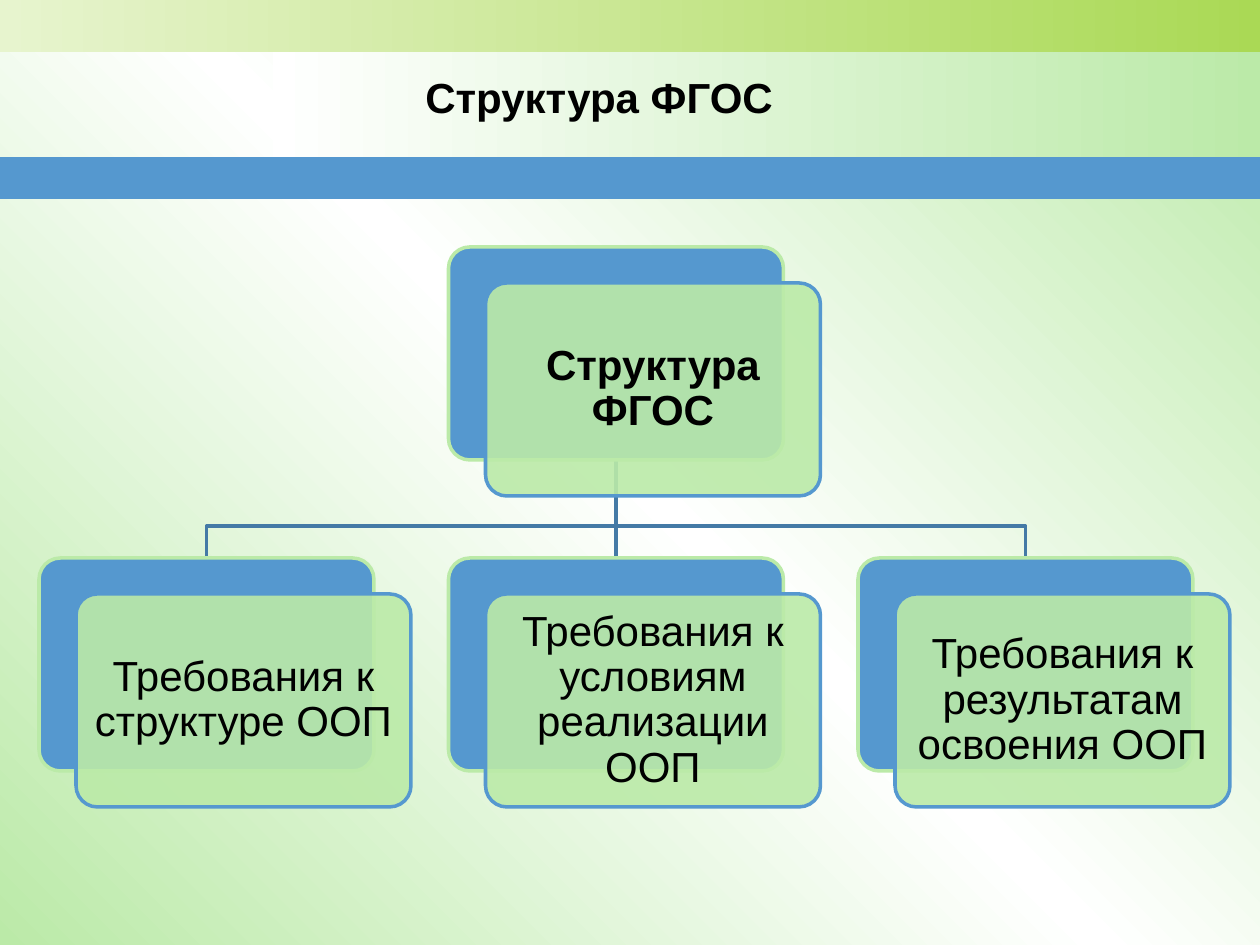
from copy import deepcopy

from lxml import etree
from pptx import Presentation
from pptx.dml.color import RGBColor
from pptx.enum.shapes import MSO_CONNECTOR, MSO_SHAPE
from pptx.enum.text import MSO_ANCHOR, PP_ALIGN
from pptx.oxml.ns import qn
from pptx.util import Pt

RECT, ROUNDED = MSO_SHAPE.RECTANGLE, MSO_SHAPE.ROUNDED_RECTANGLE
STRAIGHT = MSO_CONNECTOR.STRAIGHT
CENTER, MIDDLE = PP_ALIGN.CENTER, MSO_ANCHOR.MIDDLE

PX = 914400 / 126
WIDTH, HEIGHT = 1260, 945
GREEN, BLUE, WIRE = "BBEAA8", "5598CF", "447AA6"
WHITE, BLACK = "FFFFFF", "000000"
CARD_W, CARD_H = 335, 213
CARD_SHIFT = 37  # offset of the front card from the back card


def px(value):
    return round(value * PX)


def color(hex_code):
    return RGBColor.from_string(hex_code)


def set_gradient(fill, owner, angle, colors):
    """Spread the colors evenly along a linear gradient."""
    fill.gradient()
    fill.gradient_angle = angle
    stop_list = next(owner.iter(qn("a:gsLst")))
    for _ in colors[2:]:
        stop_list.append(deepcopy(stop_list[0]))
    for i, (stop, hex_code) in enumerate(zip(fill.gradient_stops, colors)):
        stop.color.rgb = color(hex_code)
        stop.position = i / (len(colors) - 1)


def add_box(slide, kind, x, y, w, h, fill=None, line=None):
    box = slide.shapes.add_shape(kind, px(x), px(y), px(w), px(h))
    box.shadow.inherit = False
    if fill:
        box.fill.solid()
        box.fill.fore_color.rgb = color(fill)
    if line:
        box.line.color.rgb = color(line)
        box.line.width = Pt(2)
    else:
        box.line.fill.background()
    return box


def write(frame, text, bold):
    frame.word_wrap = True
    frame.vertical_anchor = MIDDLE
    paragraph = frame.paragraphs[0]
    paragraph.text = text
    paragraph.alignment = CENTER
    paragraph.font.name = "Arial"
    paragraph.font.size = Pt(24)
    paragraph.font.bold = bold
    paragraph.font.color.rgb = color(BLACK)
    return paragraph


def add_backdrop(slide):
    set_gradient(slide.background.fill, slide._element, 45, [GREEN, WHITE, GREEN])
    bands = [
        (0, 0, WIDTH, 52, ["E7F4CE", "AAD955"]),
        (273, 52, WIDTH - 273, 105, [WHITE, GREEN]),
    ]
    for x, y, w, h, colors in bands:
        band = add_box(slide, RECT, x, y, w, h)
        set_gradient(band.fill, band._element, 0, colors)
    add_box(slide, RECT, 0, 157, WIDTH, 42, BLUE)


def add_title(slide, x, y, w, h):
    title = slide.shapes.add_textbox(px(x), px(y), px(w), px(h))
    write(title.text_frame, "Структура ФГОС ", True)


def add_card(slide, x, y, text, bold=False):
    """Draw a blue card with a translucent, labelled card in front."""
    back = add_box(slide, ROUNDED, x, y, CARD_W, CARD_H, BLUE, GREEN)
    front = add_box(slide, ROUNDED, x + CARD_SHIFT, y + CARD_SHIFT - 1,
                    CARD_W, CARD_H, GREEN, BLUE)
    for card in (back, front):
        card.adjustments[0] = 0.1
    fill_color = next(front._element.spPr.iter(qn("a:srgbClr")))
    etree.SubElement(fill_color, qn("a:alpha"), val="90000")

    frame = front.text_frame
    frame.margin_left = frame.margin_right = px(7)
    frame.margin_top = frame.margin_bottom = px(7)
    write(frame, text, bold).line_spacing = 0.9


def add_branch(slide, x1, y1, x2, y2):
    """Run a line down from the parent, across, and down to the child."""
    if x1 == x2:
        branch = slide.shapes.add_connector(STRAIGHT, px(x1), px(y1), px(x2), px(y2))
        etree.SubElement(branch._element.spPr, qn("a:effectLst"))
    else:
        bend = y2 - 32
        path = slide.shapes.build_freeform(px(x1), px(y1))
        path.add_line_segments(
            [(px(x), px(y)) for x, y in [(x1, bend), (x2, bend), (x2, y2)]],
            close=False)
        branch = path.convert_to_shape()
        branch.shadow.inherit = False
        branch.fill.background()
    branch.line.color.rgb = color(WIRE)
    branch.line.width = Pt(2)


def add_hierarchy(slide, x, y):
    requirements = [
        "Требования к структуре ООП ",
        "Требования к условиям реализации ООП",
        "Требования к результатам освоения ООП",
    ]
    step = 409.5
    child_y = y + 311
    lefts = [x + step * i for i in range(len(requirements))]
    root_x = lefts[1]

    # Branches lie behind the cards
    for left in lefts:
        add_branch(slide, root_x + CARD_W / 2, y + CARD_H,
                   left + CARD_W / 2, child_y)
    add_card(slide, root_x, y, "Структура ФГОС", bold=True)
    for left, requirement in zip(lefts, requirements):
        add_card(slide, left, child_y, requirement)


def main():
    deck = Presentation()
    deck.slide_width, deck.slide_height = px(WIDTH), px(HEIGHT)
    slide = deck.slides.add_slide(deck.slide_layouts[6])
    add_backdrop(slide)
    add_title(slide, 94, 65, 1022, 63)
    add_hierarchy(slide, 39, 247)
    deck.save("out.pptx")


if __name__ == "__main__":
    main()
